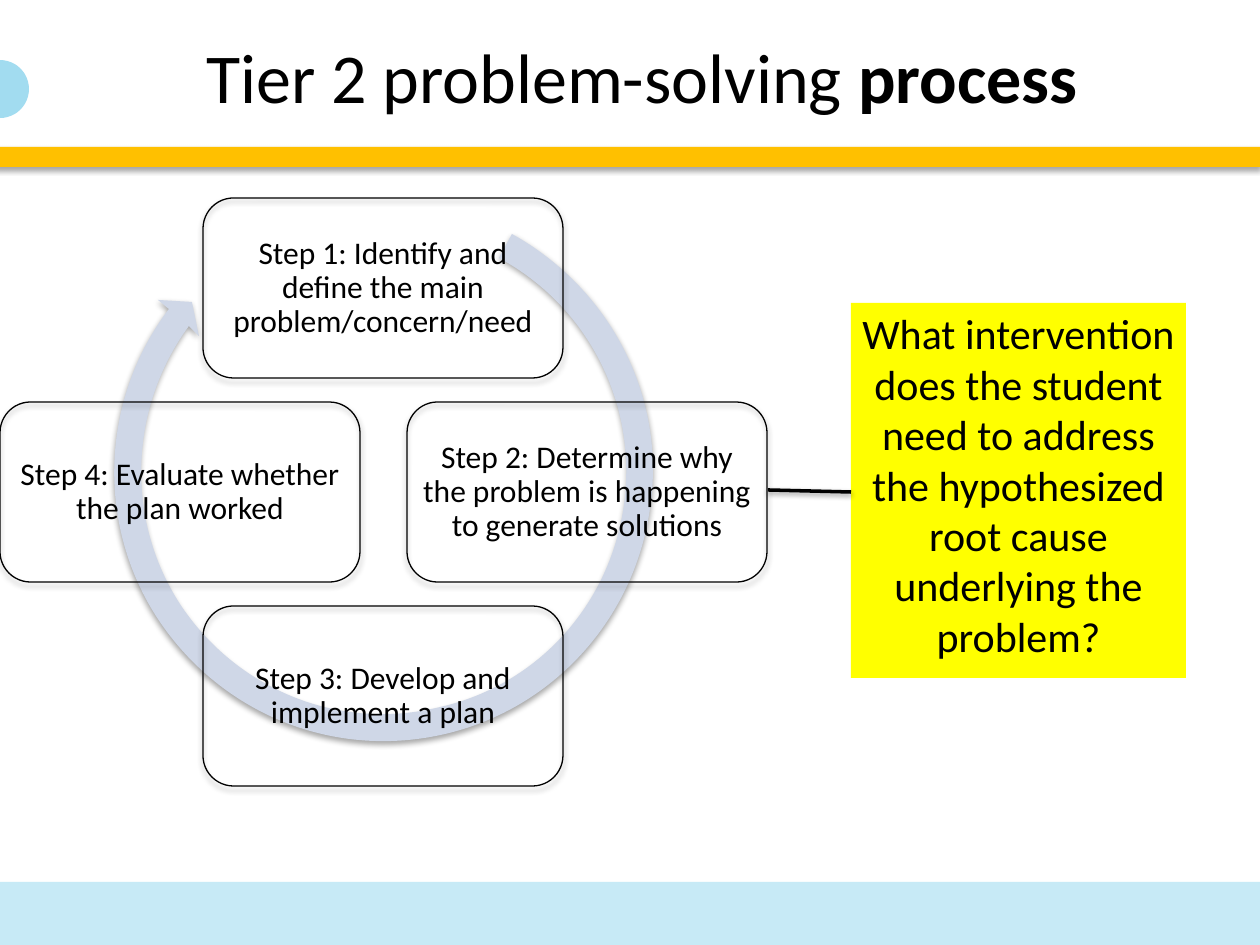
from lxml import etree
from pptx import Presentation
from pptx.dml.color import RGBColor
from pptx.enum.shapes import MSO_CONNECTOR, MSO_SHAPE
from pptx.enum.text import MSO_ANCHOR, PP_ALIGN
from pptx.oxml.ns import qn
from pptx.util import Pt

RECTANGLE = MSO_SHAPE.RECTANGLE
ROUNDED = MSO_SHAPE.ROUNDED_RECTANGLE
OVAL = MSO_SHAPE.OVAL
STRAIGHT = MSO_CONNECTOR.STRAIGHT
CENTER = PP_ALIGN.CENTER
TOP = MSO_ANCHOR.TOP
MIDDLE = MSO_ANCHOR.MIDDLE

BLACK = RGBColor(0x00, 0x00, 0x00)
PALE_BLUE = RGBColor(0xC7, 0xEA, 0xF6)
SKY_BLUE = RGBColor(0xA2, 0xDC, 0xF0)
YELLOW = RGBColor(0xFF, 0xFF, 0x00)
GOLD = RGBColor(0xFF, 0xC0, 0x00)
ARROW_BLUE = RGBColor(0xCF, 0xD7, 0xE7)

FONT = "Calibri"
SCALE = 914400 / 126

STEP_WIDTH, STEP_HEIGHT, STEP_INSET = 360, 180, 7
CYCLE_LEFT, CYCLE_TOP, CYCLE_OFFSET = 203, 402, 204
STEPS = [
    (0, -1, "Step 1: Identify and define the main problem/concern/need"),
    (1, 0, "Step 2: Determine why the problem is happening to generate solutions"),
    (0, 1, "Step 3: Develop and implement a plan"),
    (-1, 0, "Step 4: Evaluate whether the plan worked"),
]

ARROW_LEFT, ARROW_TOP, ARROW_SIZE = 101, 188, 567
ARROW_START = (512, 234)
ARROW_SEGMENTS = [
    [(611, 289), (667, 398), (650, 509)],
    [(634, 621), (551, 711), (441, 735)],
    [(330, 759), (218, 712), (156, 616)],
    [(96, 522), (101, 399), (169, 309)],
    [(158, 300)],
    [(192, 302)],
    [(199, 336)],
    [(189, 326)],
    [(129, 408), (125, 519), (180, 604)],
    [(236, 689), (338, 731), (436, 708)],
    [(536, 687), (610, 606), (624, 505)],
    [(638, 404), (588, 306), (499, 258)],
]


def px(value):
    return round(value * SCALE)


def add_shadow(shape, distance=1.8, alpha=35):
    properties = shape._element.spPr
    for effects in properties.findall(qn("a:effectLst")):
        properties.remove(effects)
    effects = etree.SubElement(properties, qn("a:effectLst"))
    shadow = etree.SubElement(
        effects, qn("a:outerShdw"), blurRad=str(Pt(3.1)),
        dist=str(Pt(distance)), dir="5400000", rotWithShape="0")
    color = etree.SubElement(shadow, qn("a:srgbClr"), val=str(BLACK))
    etree.SubElement(color, qn("a:alpha"), val=str(alpha * 1000))


def fill_plain(shape, color):
    shape.shadow.inherit = False
    shape.fill.solid()
    shape.fill.fore_color.rgb = color
    shape.line.fill.background()


def add_filled(slide, kind, box, color):
    shape = slide.shapes.add_shape(kind, *map(px, box))
    fill_plain(shape, color)
    return shape


def set_text(shape, parts, size, anchor, insets, spacing=None):
    frame = shape.text_frame
    frame.word_wrap = True
    frame.vertical_anchor = anchor
    frame.margin_left = frame.margin_right = px(insets[0])
    frame.margin_top = frame.margin_bottom = px(insets[1])
    paragraph = frame.paragraphs[0]
    paragraph.alignment = CENTER
    paragraph.line_spacing = spacing
    for text, bold in parts:
        run = paragraph.add_run()
        run.text = text
        run.font.name = FONT
        run.font.size = Pt(size)
        run.font.bold = bold
        run.font.color.rgb = BLACK


def add_label(slide, box, parts, size, insets, spacing=None):
    label = slide.shapes.add_textbox(*map(px, box))
    set_text(label, parts, size, MIDDLE, insets, spacing)


def add_step(slide, column, row, text):
    left = max(CYCLE_LEFT + column * CYCLE_OFFSET, 0)
    top = CYCLE_TOP + row * CYCLE_OFFSET
    box = (left, top, STEP_WIDTH, STEP_HEIGHT)
    outline = slide.shapes.add_shape(ROUNDED, *map(px, box))
    outline.adjustments[0] = 0.17
    outline.fill.background()
    outline.line.color.rgb = BLACK
    outline.line.width = Pt(0.75)
    add_shadow(outline)
    inner = (left + 9, top + 9, STEP_WIDTH - 18, STEP_HEIGHT - 18)
    add_label(slide, inner, [(text, False)], 18, (STEP_INSET, STEP_INSET), 0.9)


def add_path_command(outline, name, points):
    command = etree.SubElement(outline, qn(name))
    for x, y in points:
        etree.SubElement(command, qn("a:pt"),
                         x=str(px(x - ARROW_LEFT)), y=str(px(y - ARROW_TOP)))


def add_cycle_arrow(slide):
    builder = slide.shapes.build_freeform(*map(px, ARROW_START))
    corners = [tuple(map(px, segment[-1])) for segment in ARROW_SEGMENTS]
    builder.add_line_segments(corners, close=True)
    arrow = builder.convert_to_shape()
    arrow.left, arrow.top = px(ARROW_LEFT), px(ARROW_TOP)
    arrow.width = arrow.height = px(ARROW_SIZE)

    outline = arrow._element.spPr.find(".//" + qn("a:path"))
    outline.clear()
    outline.set("w", str(px(ARROW_SIZE)))
    outline.set("h", str(px(ARROW_SIZE)))
    add_path_command(outline, "a:moveTo", [ARROW_START])
    for segment in ARROW_SEGMENTS:
        name = "a:cubicBezTo" if len(segment) == 3 else "a:lnTo"
        add_path_command(outline, name, segment)
    add_path_command(outline, "a:close", [])

    fill_plain(arrow, ARROW_BLUE)
    add_shadow(arrow)


def add_link(slide, start, end):
    link = slide.shapes.add_connector(STRAIGHT, *map(px, start + end))
    link.line.color.rgb = BLACK
    link.line.width = Pt(2)
    add_shadow(link, 1.6, 38)


def main():
    presentation = Presentation()
    presentation.slide_width = px(1260)
    presentation.slide_height = px(945)
    slide = presentation.slides.add_slide(presentation.slide_layouts[6])

    add_filled(slide, RECTANGLE, (0, 882, 1260, 63), PALE_BLUE)
    add_filled(slide, OVAL, (-29, 60, 58, 58), SKY_BLUE)
    title = [("Tier 2 problem-solving ", False), ("process", True)]
    add_label(slide, (165, 24, 954, 103), title, 40, (9, 5))

    question = add_filled(slide, RECTANGLE, (851, 303, 335, 375), YELLOW)
    set_text(question, [("What intervention does the student need to address "
                         "the hypothesized root cause underlying the problem?",
                         False)], 24, TOP, (9, 5))
    add_link(slide, (768, 490), (851, 492))

    add_cycle_arrow(slide)
    for column, row, text in STEPS:
        add_step(slide, column, row, text)

    divider = add_filled(slide, RECTANGLE, (-4, 147, 1264, 20), GOLD)
    add_shadow(divider)
    presentation.save("out.pptx")


if __name__ == "__main__":
    main()
